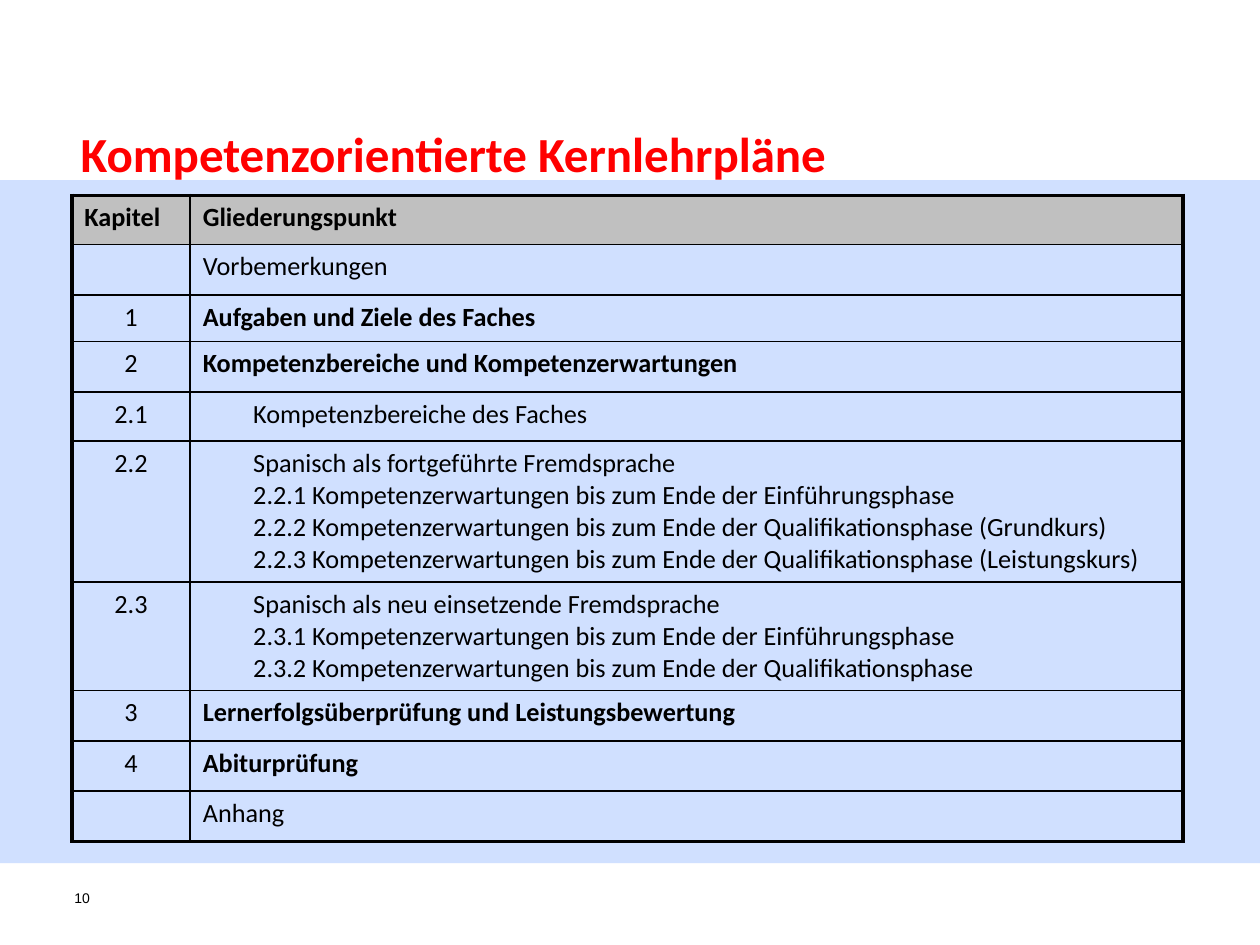
from lxml import etree
from pptx import Presentation
from pptx.dml.color import RGBColor
from pptx.enum.shapes import MSO_SHAPE
from pptx.enum.text import MSO_ANCHOR, MSO_AUTO_SIZE, PP_ALIGN
from pptx.oxml import parse_xml
from pptx.oxml.ns import nsdecls, qn
from pptx.util import Inches, Pt

BLACK, RED, GREY, BLUE = "000000", "FF0000", "C0C0C0", "6699FF"
THIN, THICK = 1, 2.25
COLUMN_WIDTHS = (0.94, 7.88)

# Each entry: chapter, lines, style, row height.
OUTLINE = [
    ("Kapitel", ["Gliederungspunkt"], "header", 0.39),
    ("", ["Vorbemerkungen"], "plain", 0.39),
    ("1", ["Aufgaben und Ziele des Faches"], "bold", 0.37),
    ("2", ["Kompetenzbereiche und Kompetenzerwartungen"], "bold", 0.4),
    ("2.1", ["Kompetenzbereiche des Faches"], "indented", 0.39),
    ("2.2", [
        "Spanisch als fortgeführte Fremdsprache",
        "2.2.1 Kompetenzerwartungen bis zum Ende der Einführungsphase",
        "2.2.2 Kompetenzerwartungen bis zum Ende der Qualifikationsphase (Grundkurs)",
        "2.2.3 Kompetenzerwartungen bis zum Ende der Qualifikationsphase (Leistungskurs)",
    ], "indented", 1.12),
    ("2.3", [
        "Spanisch als neu einsetzende Fremdsprache",
        "2.3.1 Kompetenzerwartungen bis zum Ende der Einführungsphase",
        "2.3.2 Kompetenzerwartungen bis zum Ende der Qualifikationsphase",
    ], "indented", 0.86),
    ("3", ["Lernerfolgsüberprüfung und Leistungsbewertung"], "bold", 0.4),
    ("4", ["Abiturprüfung"], "bold", 0.4),
    ("", ["Anhang"], "plain", 0.39),
]


def color(hex_value):
    """Turn a hex string into a colour."""
    return RGBColor.from_string(hex_value)


def format_font(font, size, hex_value, bold=False, name="Calibri"):
    """Set the face, size, weight and colour of a font."""
    font.name, font.size, font.bold = name, Pt(size), bold
    font.color.rgb = color(hex_value)


def add_band(slide):
    """Add the translucent band behind the table."""
    band = slide.shapes.add_shape(
        MSO_SHAPE.RECTANGLE, 0, Inches(1.43), Inches(10), Inches(5.42))
    band.shadow.inherit = False
    band.line.fill.background()
    band.fill.solid()
    band.fill.fore_color.rgb = color(BLUE)
    tint = band.fill._xPr.find(qn("a:solidFill"))[0]
    etree.SubElement(tint, qn("a:alpha"), val="30000")


def set_borders(cell, widths):
    """Draw the left, right, top and bottom borders of a cell."""
    properties = cell._tc.get_or_add_tcPr()
    for position, (side, width) in enumerate(zip("LRTB", widths)):
        properties.insert(position, parse_xml(
            f'<a:ln{side} {nsdecls("a")} w="{Pt(width)}"><a:solidFill>'
            f'<a:srgbClr val="{BLACK}"/></a:solidFill></a:ln{side}>'))


def fill_cell(cell, lines, bold=False, align=PP_ALIGN.LEFT, indent=0):
    """Write lines into a cell, one paragraph each."""
    frame = cell.text_frame
    for number, line in enumerate(lines):
        paragraph = frame.add_paragraph() if number else frame.paragraphs[0]
        paragraph.alignment = align
        if indent:
            paragraph.level = 1
            paragraph._p.get_or_add_pPr().set("marL", str(Inches(indent)))
        run = paragraph.add_run()
        run.text = line
        format_font(run.font, 15, BLACK, bold)


def add_outline_table(slide):
    """Add the table of chapters and sections."""
    heights = [height for *_, height in OUTLINE]
    table = slide.shapes.add_table(
        len(OUTLINE), 2, Inches(0.57), Inches(1.55),
        Inches(sum(COLUMN_WIDTHS)), Inches(sum(heights))).table
    table.first_row = table.horz_banding = False
    for column, width in zip(table.columns, COLUMN_WIDTHS):
        column.width = Inches(width)
    last = len(OUTLINE) - 1
    for index, (chapter, lines, style, height) in enumerate(OUTLINE):
        table.rows[index].height = Inches(height)
        chapter_cell, section_cell = table.rows[index].cells
        header = style == "header"
        fill_cell(chapter_cell, [chapter], header,
                  PP_ALIGN.LEFT if header else PP_ALIGN.CENTER)
        fill_cell(section_cell, lines, style in ("header", "bold"),
                  indent=0.4 if style == "indented" else 0)
        top = THICK if index == 0 else THIN
        bottom = THICK if index == last else THIN
        set_borders(chapter_cell, (THICK, THIN, top, bottom))
        set_borders(section_cell, (THIN, THICK, top, bottom))
        for cell in (chapter_cell, section_cell):
            if header:
                cell.fill.solid()
                cell.fill.fore_color.rgb = color(GREY)
            else:
                cell.fill.background()


def add_page_number(slide):
    """Add the page number at the lower left."""
    box = slide.shapes.add_textbox(
        Inches(0.59), Inches(7.06), Inches(0.32), Inches(0.37))
    frame = box.text_frame
    frame.word_wrap = True
    frame.margin_left = frame.margin_right = 0
    frame.margin_top = frame.margin_bottom = 0
    frame.text = "10"
    format_font(frame.paragraphs[0].runs[0].font, 8, BLACK, name="Arial")


def place_title(slide):
    """Write the title and bring it in front of the band."""
    title = slide.shapes.title
    title.left, title.top = Inches(0.54), Inches(0.93)
    title.width, title.height = Inches(9.04), Inches(0.57)
    frame = title.text_frame
    frame.text = "Kompetenzorientierte Kernlehrpläne"
    frame.word_wrap = True
    frame.auto_size = MSO_AUTO_SIZE.NONE
    frame.vertical_anchor = MSO_ANCHOR.TOP
    paragraph = frame.paragraphs[0]
    paragraph.alignment = PP_ALIGN.LEFT
    format_font(paragraph.runs[0].font, 28, RED, bold=True)
    slide.shapes._spTree.append(title._element)


def main():
    """Build and save the slide."""
    presentation = Presentation()
    presentation.slide_width, presentation.slide_height = Inches(10), Inches(7.5)
    slide = presentation.slides.add_slide(presentation.slide_layouts[5])
    add_band(slide)
    add_page_number(slide)
    add_outline_table(slide)
    place_title(slide)
    presentation.save("out.pptx")


if __name__ == "__main__":
    main()
